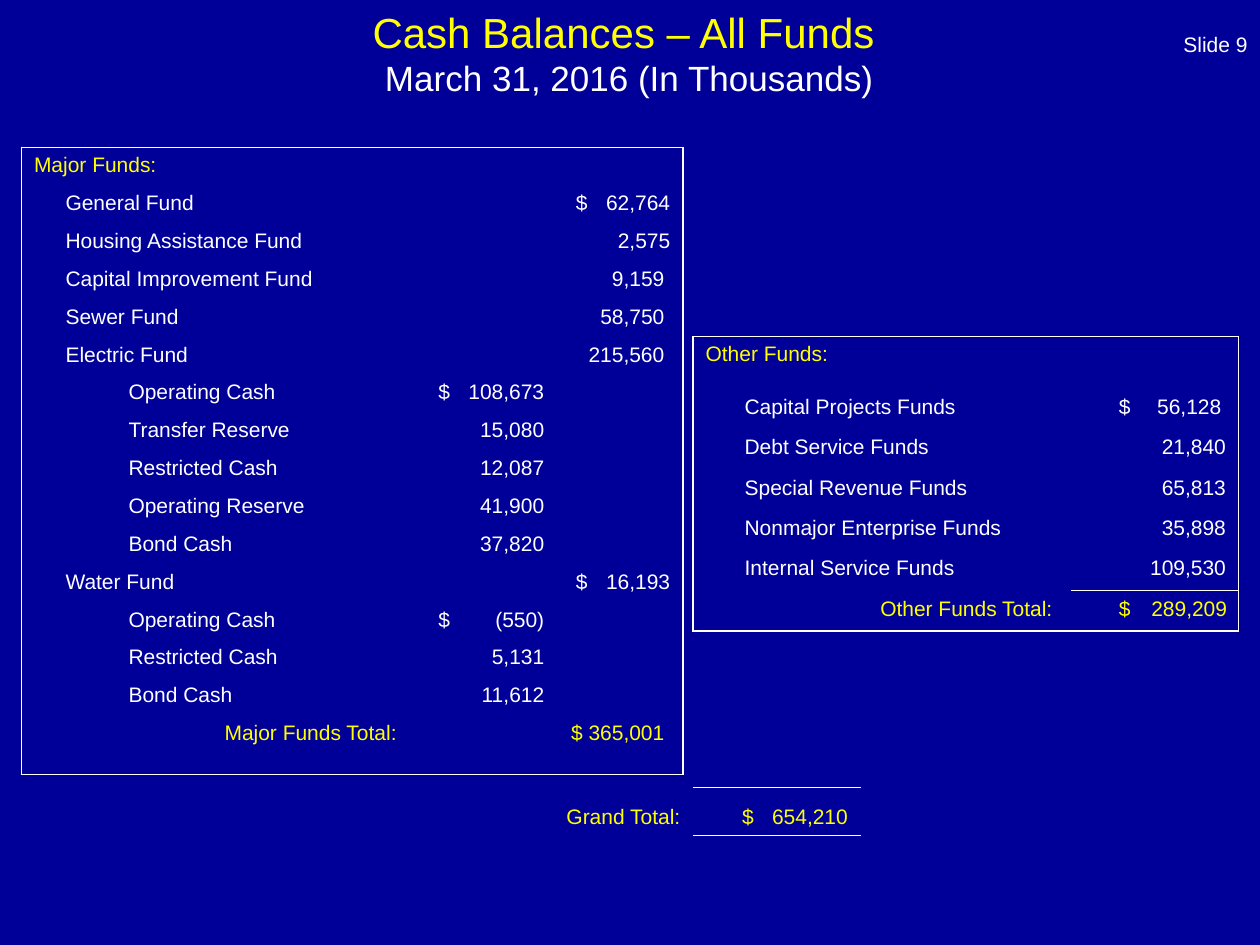
from lxml import etree
from pptx import Presentation
from pptx.dml.color import RGBColor
from pptx.enum.text import MSO_ANCHOR, MSO_AUTO_SIZE, PP_ALIGN
from pptx.oxml.ns import qn
from pptx.util import Inches, Pt

NAVY = RGBColor(0x00, 0x00, 0x99)
WHITE = RGBColor(0xFF, 0xFF, 0xFF)
YELLOW = RGBColor(0xFF, 0xFF, 0x00)
RIGHT, CENTER = PP_ALIGN.RIGHT, PP_ALIGN.CENTER
TOP, MIDDLE, BOTTOM = MSO_ANCHOR.TOP, MSO_ANCHOR.MIDDLE, MSO_ANCHOR.BOTTOM
FIXED = MSO_AUTO_SIZE.NONE
FONT, SIZE, PAD = "Arial", 12, 1.2
PLAIN = "{2D5ABB26-0587-4C30-8999-92F81FD0307C}"
HEAD, FUND, PART, OTHER, TOTAL = 0, 3, 9, 3.75, None

MAJOR_ROWS = [
    (HEAD, "Major Funds:", "", ""),
    (FUND, "General Fund", "", "$\t62,764"),
    (FUND, "Housing Assistance Fund", "", "2,575"),
    (FUND, "Capital Improvement Fund", "", "9,159 "),
    (FUND, "Sewer Fund", "", "58,750 "),
    (FUND, "Electric Fund", "", "215,560 "),
    (PART, "Operating Cash", "$\t108,673", ""),
    (PART, "Transfer Reserve", "15,080", ""),
    (PART, "Restricted Cash", "12,087", ""),
    (PART, "Operating Reserve", "41,900", ""),
    (PART, "Bond Cash", "37,820", ""),
    (FUND, "Water Fund", "", "$\t16,193"),
    (PART, "Operating Cash", "$\t(550)", ""),
    (PART, "Restricted Cash", "5,131", ""),
    (PART, "Bond Cash", "11,612", ""),
    (TOTAL, "Major Funds Total:", "", "$ 365,001 "),
]
OTHER_ROWS = [
    (HEAD, "Other Funds:", ""),
    (OTHER, "Capital Projects Funds", "$\t56,128 "),
    (OTHER, "Debt Service Funds", "21,840"),
    (OTHER, "Special Revenue Funds", "65,813"),
    (OTHER, "Nonmajor Enterprise Funds", "35,898"),
    (OTHER, "Internal Service Funds", "109,530"),
    (TOTAL, "Other Funds Total: ", "$\t289,209"),
]
GRAND_ROWS = [(TOTAL, "Grand Total:", "$\t654,210")]


def grid(units):
    """Turn grid units, 120 across the slide, into a length."""
    return Inches(round(units / 12, 2))


def paint(run, size, color):
    """Format one run."""
    run.font.name = FONT
    run.font.size = Pt(size)
    run.font.color.rgb = color


def place(shape, box):
    """Set a shape's place and size in grid units."""
    shape.left, shape.top, shape.width, shape.height = map(grid, box)


def add_title(slide, text, box):
    """Fill the title with a yellow line and a white line."""
    title = slide.shapes.title
    place(title, box)
    frame = title.text_frame
    frame.text = text
    frame.auto_size = FIXED
    frame.vertical_anchor = MIDDLE
    line = frame.paragraphs[0]
    line.alignment = CENTER
    for run, size, color in zip(line.runs, (24, 20), (YELLOW, WHITE)):
        paint(run, size, color)


def add_label(slide, text, box):
    """Add a right-aligned white label."""
    frame = slide.shapes.add_textbox(*map(grid, box)).text_frame
    frame.word_wrap = True
    frame.vertical_anchor = BOTTOM
    frame.text = text
    line = frame.paragraphs[0]
    line.alignment = RIGHT
    paint(line.runs[0], SIZE, WHITE)


def set_edges(cell, sides):
    """Draw white edges on the named sides and clear the rest."""
    props = cell._tc.get_or_add_tcPr()
    for side in "LRTB":
        edge = etree.SubElement(props, qn("a:ln" + side), w=str(Pt(1)))
        if side in sides:
            fill = etree.SubElement(edge, qn("a:solidFill"))
            etree.SubElement(fill, qn("a:srgbClr"), val=str(WHITE))
        else:
            etree.SubElement(edge, qn("a:noFill"))
    cell.fill.background()


def fill_cell(cell, text, indent, inset, width, anchor):
    """Write a label, or an amount when an inset is given."""
    cell.vertical_anchor = anchor
    cell.text_frame.text = text
    line = cell.text_frame.paragraphs[0]
    if not text:
        etree.SubElement(line._p, qn("a:endParaRPr"), sz=str(SIZE * 100))
        return
    props = line._p.get_or_add_pPr()
    if "\t" in text:
        cell.margin_left = grid(inset)
        cell.margin_right = grid(PAD / 2)
        tabs = etree.SubElement(props, qn("a:tabLst"))
        stop = grid(width - inset - PAD)
        etree.SubElement(tabs, qn("a:tab"), pos=str(stop), algn="r")
    elif inset or indent is TOTAL:
        line.alignment = RIGHT
    elif indent:
        props.set("marL", str(grid(indent)))
        props.set("indent", "0")
    color = YELLOW if indent in (HEAD, TOTAL) else WHITE
    for run in line.runs:
        paint(run, SIZE, color)


def add_funds(slide, rows, spot, widths, heights, insets, edges, anchor=TOP):
    """Add a table of funds, with edges given by a rule on row and column."""
    box = (*spot, sum(widths), sum(heights))
    frame = slide.shapes.add_table(len(rows), len(widths), *map(grid, box))
    table = frame.table
    table.first_row = table.horz_banding = False
    table._tbl.tblPr.find(qn("a:tableStyleId")).text = PLAIN
    for col, width in zip(table.columns, widths):
        col.width = grid(width)
    for r, (indent, *texts) in enumerate(rows):
        table.rows[r].height = grid(heights[r])
        for c, text in enumerate(texts):
            cell = table.cell(r, c)
            set_edges(cell, edges(r, c))
            fill_cell(cell, text, indent, insets[c], widths[c], anchor)


def frame_edges(rows, cols):
    """Return a rule that frames a whole table."""
    def rule(r, c):
        """Name the outer sides of one cell."""
        sides = zip("LRTB", (c == 0, c == cols - 1, r == 0, r == rows - 1))
        return "".join(side for side, outer in sides if outer)
    return rule


def other_edges(r, c):
    """Frame the other funds and rule off their total."""
    sum_line = {(5, 1): "B", (6, 1): "T"}
    return frame_edges(7, 2)(r, c) + sum_line.get((r, c), "")


def grand_edges(r, c):
    """Rule the grand total above and below."""
    return "TB" if c else ""


def main():
    """Build the slide of cash balances."""
    deck = Presentation()
    deck.slide_width, deck.slide_height = Inches(10), Inches(7.5)
    slide = deck.slides.add_slide(deck.slide_layouts[5])
    slide.background.fill.solid()
    slide.background.fill.fore_color.rgb = NAVY
    add_label(slide, "Slide 9", (92, 0, 28, 6))
    add_title(slide, "Cash Balances – All Funds \vMarch 31, 2016 (In Thousands)",
              (4, 1, 112, 8))
    add_funds(slide, MAJOR_ROWS, (2, 14), (37, 14, 12), [3.6] * 15 + [5.6],
              (0, 2.7, 1.8), frame_edges(16, 3))
    add_funds(slide, OTHER_ROWS, (66, 32), (36, 16), [5] + [3.86] * 6,
              (0, 4.5), other_edges)
    add_funds(slide, GRAND_ROWS, (39, 75), (27, 16), [4.6], (0, 4.7),
              grand_edges, BOTTOM)
    deck.save("out.pptx")


if __name__ == "__main__":
    main()
